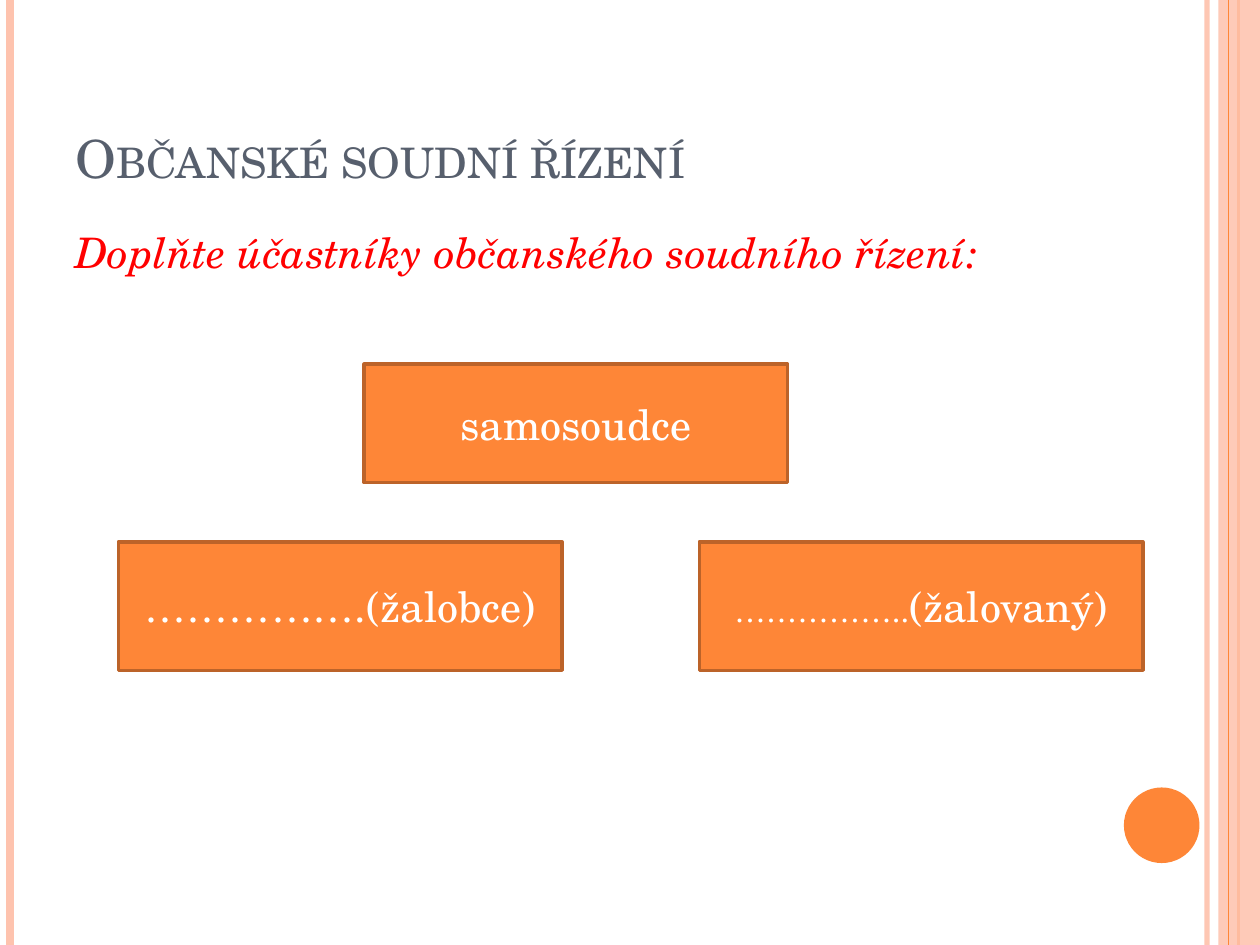
from dataclasses import dataclass

from lxml import etree
from pptx import Presentation
from pptx.dml.color import RGBColor
from pptx.enum import shapes, text
from pptx.oxml import ns
from pptx.util import Inches, Pt

FONT = "TeX Gyre Schola"
ORANGE = RGBColor(0xFE, 0x86, 0x37)
PEACH = RGBColor(0xFE, 0xC3, 0xAE)
BROWN = RGBColor(0xBC, 0x63, 0x29)
SLATE = RGBColor(0x57, 0x5F, 0x6D)
RED = RGBColor(0xFF, 0x00, 0x00)
WHITE = RGBColor(0xFF, 0xFF, 0xFF)
WIDTH, HEIGHT = 10, 7.5


@dataclass
class Stripe:
    x: float
    color: RGBColor
    weight: float
    alpha: int = 100


@dataclass
class Party:
    x: float
    y: float
    w: float
    h: float
    runs: list[tuple[str, int]]


OUTER_STRIPES = [
    Stripe(9.58, PEACH, 3, 93),
    Stripe(0.08, PEACH, 4.5),
    Stripe(9.83, ORANGE, 1.5),
]
INNER_STRIPE = Stripe(9.75, ORANGE, 0.75)
PARTIES = [
    Party(2.89, 2.89, 3.36, 0.94, [("samosoudce", 24)]),
    Party(0.94, 4.3, 3.52, 1.02, [("…………….(žalobce)", 24)]),
    Party(5.55, 4.3, 3.52, 1.02, [("……………..", 18), ("(žalovaný)", 24)]),
]


def set_alpha(sp, percent: int) -> None:
    clr = next(sp._element.spPr.iter(ns.qn("a:srgbClr")))
    etree.SubElement(clr, ns.qn("a:alpha")).set("val", str(percent * 1000))


def add_stripe(s, stripe: Stripe) -> None:
    x = Inches(stripe.x)
    line = s.shapes.add_connector(
        shapes.MSO_CONNECTOR.STRAIGHT, x, 0, x, Inches(HEIGHT))
    line.line.color.rgb = stripe.color
    line.line.width = Pt(stripe.weight)
    if stripe.alpha < 100:
        set_alpha(line, stripe.alpha)
    etree.SubElement(line._element.spPr, ns.qn("a:effectLst"))


def add_block(s, kind, x: float, y: float, w: float, h: float, fill: RGBColor):
    sp = s.shapes.add_shape(kind, Inches(x), Inches(y), Inches(w), Inches(h))
    sp.shadow.inherit = False
    sp.fill.solid()
    sp.fill.fore_color.rgb = fill
    sp.line.fill.background()
    return sp


def add_run(p, content: str, size: int, color: RGBColor):
    r = p.add_run()
    r.text = content
    r.font.name = FONT
    r.font.size = Pt(size)
    r.font.color.rgb = color
    return r


def add_party(s, party: Party) -> None:
    sp = add_block(s, shapes.MSO_SHAPE.RECTANGLE,
                   party.x, party.y, party.w, party.h, ORANGE)
    sp.line.color.rgb = BROWN
    sp.line.width = Pt(2)
    tf = sp.text_frame
    tf.word_wrap = True
    tf.vertical_anchor = text.MSO_ANCHOR.MIDDLE
    p = tf.paragraphs[0]
    p.alignment = text.PP_ALIGN.CENTER
    for content, size in party.runs:
        add_run(p, content, size, WHITE)


def add_text(s, y: float, h: float, anchor, content: str, size: int,
             color: RGBColor):
    tf = s.shapes.add_textbox(
        Inches(0.5), Inches(y), Inches(8.17), Inches(h)).text_frame
    tf.word_wrap = True
    tf.vertical_anchor = anchor
    p = tf.paragraphs[0]
    return p, add_run(p, content, size, color)


def main() -> None:
    prs = Presentation()
    prs.slide_width, prs.slide_height = Inches(WIDTH), Inches(HEIGHT)
    s = prs.slides.add_slide(prs.slide_layouts[6])

    for stripe in OUTER_STRIPES:
        add_stripe(s, stripe)
    band = add_block(s, shapes.MSO_SHAPE.RECTANGLE,
                     9.67, 0, 0.33, HEIGHT, PEACH)
    set_alpha(band, 87)
    add_stripe(s, INNER_STRIPE)
    add_block(s, shapes.MSO_SHAPE.OVAL, 8.92, 6.25, 0.6, 0.6, ORANGE)

    _, r = add_text(s, 0.3, 1.25, text.MSO_ANCHOR.BOTTOM,
                    "Občanské soudní řízení", 30, SLATE)
    r._r.get_or_add_rPr().set("cap", "small")

    p, r = add_text(s, 1.75, 5.33, text.MSO_ANCHOR.TOP,
                    "Doplňte účastníky občanského soudního řízení:", 24, RED)
    r.font.italic = True
    p.space_before = Pt(6)
    pPr = p._p.get_or_add_pPr()
    pPr.set("marL", str(Inches(0.3)))
    pPr.set("indent", str(Inches(-0.3)))

    for party in PARTIES:
        add_party(s, party)

    prs.save("out.pptx")


if __name__ == "__main__":
    main()
